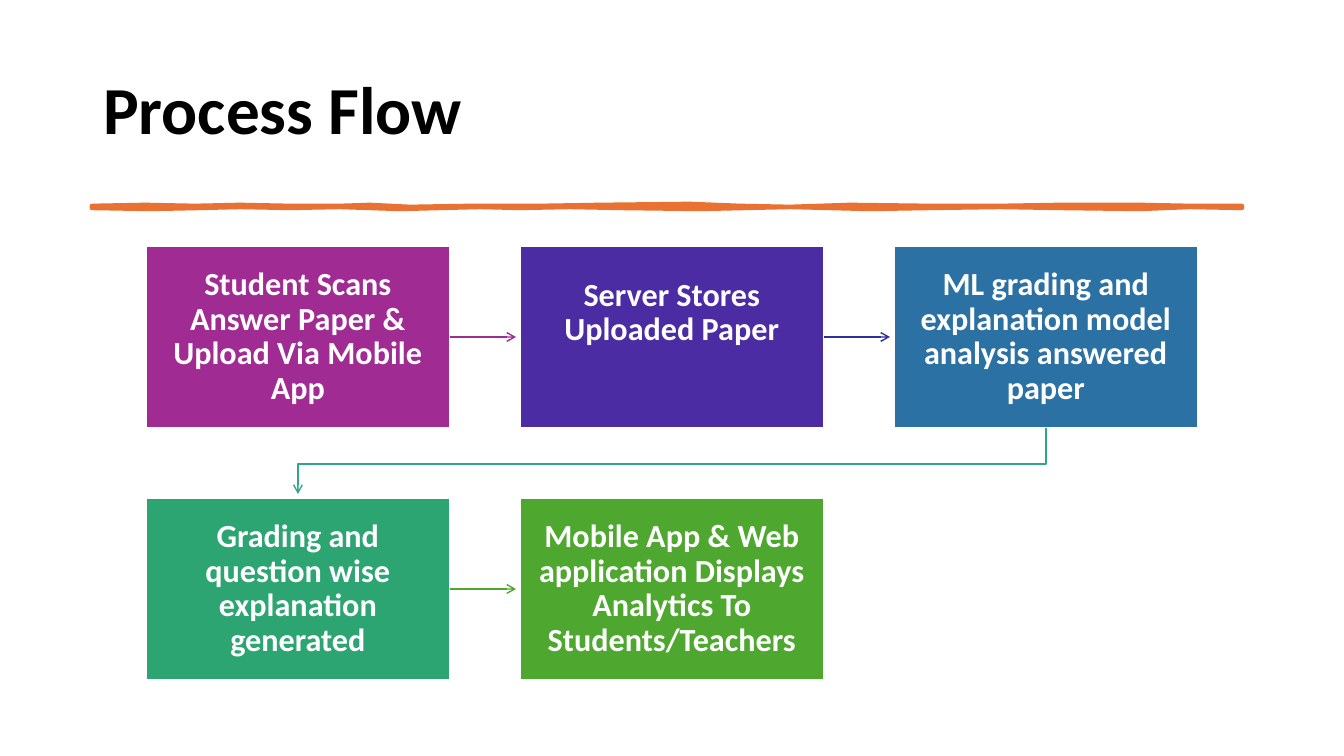
"""Build the Process Flow slide: a title, a hand-drawn rule and five linked steps."""
from lxml.etree import SubElement
from pptx import Presentation
from pptx.dml.color import RGBColor
from pptx.enum.shapes import MSO_CONNECTOR, MSO_SHAPE
from pptx.enum.text import MSO_ANCHOR, MSO_AUTO_SIZE, PP_ALIGN
from pptx.oxml.ns import qn
from pptx.util import Pt

PX = 914400 / 100.8
THEME = {
    "font": "Calibri", "title_size": 48, "step_size": 23,
    "title": "000000", "white": "FFFFFF", "rule": "E97132",
    "steps": ["A02B93", "4B2CA2", "2C71A4", "2DA573", "4EA72E"],
    "arrows": ["A02B93", "2C2EA2", "4EA72E"], "return": "2DA594",
}


def add_text(tf, text, size, color, align):
    """Write one bold run into the first paragraph of a frame."""
    tf.word_wrap = True
    tf.auto_size = MSO_AUTO_SIZE.NONE
    tf.vertical_anchor = MSO_ANCHOR.MIDDLE
    p = tf.paragraphs[0]
    p.alignment = align
    p.line_spacing = 0.9
    r = p.add_run()
    r.text = text
    r.font.name = THEME["font"]
    r.font.size = Pt(size)
    r.font.bold = True
    r.font.color.rgb = RGBColor.from_string(color)


def set_line(sp, color, width, arrow=False):
    """Give a shape a solid round line, with an open arrowhead if asked."""
    sp.line.color.rgb = RGBColor.from_string(color)
    sp.line.width = Pt(width)
    ln = sp.element.spPr.find(qn("a:ln"))
    SubElement(ln, qn("a:round"))
    if arrow:
        SubElement(ln, qn("a:tailEnd"), type="arrow")


prs = Presentation()
prs.slide_width = round(1344 * PX)
prs.slide_height = round(756 * PX)
s = prs.slides.add_slide(prs.slide_layouts[5])

title = s.shapes.title
title.left, title.top, title.width, title.height = [round(v * PX) for v in (93, 40, 1159, 146)]
add_text(title.text_frame, "Process Flow", THEME["title_size"], THEME["title"], PP_ALIGN.LEFT)

upper = [(92, 206), (145, 205), (195, 206), (240, 205), (290, 206), (340, 206),
         (370, 205), (410, 207), (470, 206), (540, 206), (600, 205), (690, 204),
         (740, 206), (790, 207), (850, 205), (930, 206), (1000, 206), (1060, 205),
         (1140, 205), (1190, 206), (1242, 206)]
lower = [(1242, 208), (1190, 207), (1140, 209), (1060, 208), (1000, 207),
         (930, 208), (870, 209), (790, 207), (700, 209), (620, 208), (570, 207),
         (520, 208), (480, 207), (400, 209), (340, 207), (290, 208), (240, 207),
         (200, 208), (150, 209), (92, 208)]
fb = s.shapes.build_freeform(*upper[0], scale=PX)
fb.add_line_segments(upper[1:] + lower, close=True)
rule = fb.convert_to_shape()
rule.shadow.inherit = False
rule.fill.solid()
rule.fill.fore_color.rgb = RGBColor.from_string(THEME["rule"])
set_line(rule, THEME["rule"], 3.25)

LEFT, TOP, WIDTH, HEIGHT = 146, 246, 304, 182
STEP_X, STEP_Y, COLUMNS, GAP = 374, 252, 3, 4
steps = [
    ("Student Scans Answer Paper & Upload Via Mobile App", 16),
    ("Server Stores Uploaded Paper", 64),
    ("ML grading and explanation model analysis answered paper", 16),
    ("Grading and question wise explanation generated", 16),
    ("Mobile App & Web application Displays Analytics To Students/Teachers", 16),
]
boxes = []
for i, (text, bottom) in enumerate(steps):
    row, col = divmod(i, COLUMNS)
    x, y = LEFT + col * STEP_X, TOP + row * STEP_Y
    sp = s.shapes.add_shape(MSO_SHAPE.RECTANGLE, *[round(v * PX) for v in (x, y, WIDTH, HEIGHT)])
    sp.shadow.inherit = False
    sp.fill.solid()
    sp.fill.fore_color.rgb = RGBColor.from_string(THEME["steps"][i])
    set_line(sp, THEME["white"], 1.5)
    tf = sp.text_frame
    tf.margin_left = tf.margin_right = round(15 * PX)
    tf.margin_top, tf.margin_bottom = round(16 * PX), round(bottom * PX)
    add_text(tf, text, THEME["step_size"], THEME["white"], PP_ALIGN.CENTER)
    boxes.append(sp)

for start, color in zip((0, 1, 3), THEME["arrows"]):
    a, b = boxes[start], boxes[start + 1]
    y = a.top + a.height // 2
    arrow = s.shapes.add_connector(MSO_CONNECTOR.STRAIGHT, a.left + a.width, y,
                                   b.left - round(GAP * PX), y)
    arrow.begin_connect(a, 3)
    set_line(arrow, color, 1, arrow=True)
    SubElement(arrow.element.spPr, qn("a:effectLst"))

first_x = LEFT + WIDTH // 2
last_x = first_x + 2 * STEP_X
turn_y = TOP + HEIGHT + 36
fb = s.shapes.build_freeform(last_x, TOP + HEIGHT, scale=PX)
fb.add_line_segments([(last_x, turn_y), (first_x, turn_y),
                      (first_x, TOP + STEP_Y - GAP)], close=False)
back = fb.convert_to_shape()
back.shadow.inherit = False
back.fill.background()
set_line(back, THEME["return"], 1, arrow=True)

prs.save("out.pptx")
